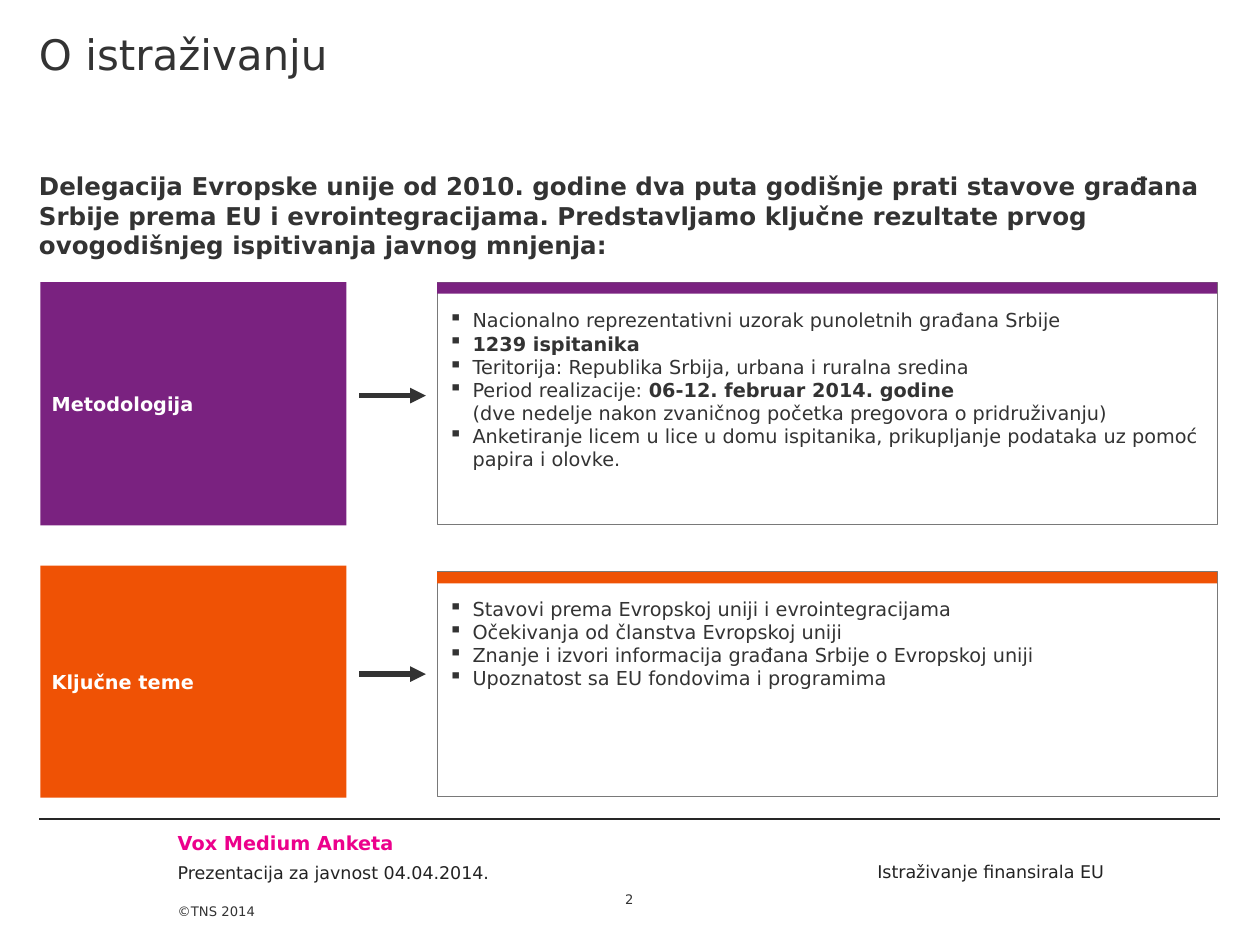
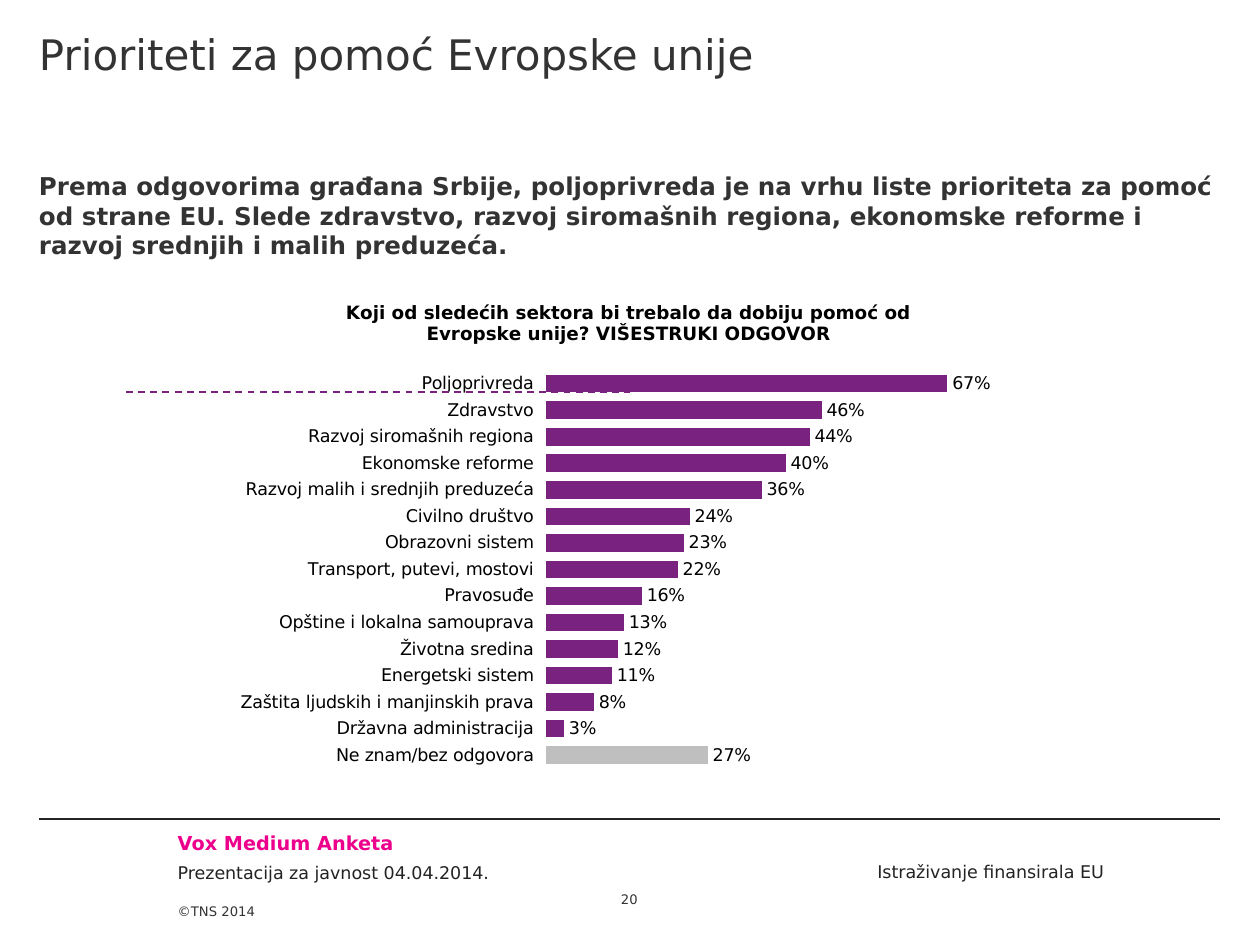
"""Build two survey slides: the study outline and the aid priorities chart."""
from lxml.etree import SubElement as Sub
from pptx import Presentation
from pptx.chart.data import CategoryChartData as Data
from pptx.dml.color import RGBColor as RGB
from pptx.enum.chart import XL_CHART_TYPE as Kind, XL_LABEL_POSITION as Spot
from pptx.enum.chart import XL_TICK_LABEL_POSITION as Tick, XL_TICK_MARK as Mark
from pptx.enum.dml import MSO_LINE as Dash
from pptx.enum.shapes import MSO_CONNECTOR as Link, MSO_SHAPE as Form
from pptx.enum.text import MSO_ANCHOR as Anchor, PP_ALIGN as Align
from pptx.oxml.ns import qn
from pptx.util import Inches, Pt

FACE = "DejaVu Sans"
DARK, NOTE, RULE = RGB(0x33, 0x33, 0x33), RGB(0x23, 0x23, 0x23), RGB(0x26, 0x26, 0x26)
PINK, PURPLE, ORANGE = RGB(0xEC, 0, 0x8C), RGB(0x7A, 0x22, 0x80), RGB(0xEF, 0x52, 0x05)
WHITE, BLACK = RGB(0xFF, 0xFF, 0xFF), RGB(0, 0, 0)
EDGE, GREY = RGB(0x79, 0x79, 0x79), RGB(0xBF, 0xBF, 0xBF)

LEFT, WIDE = 0.31, 9.37
PAD = (0.09, 0.04, 0.09, 0.04)
PERCENT = r"0\%"

FOOT = [
    ("Vox Medium Anketa", (1.41, 6.6, 3.31, 0.19), 11, PINK, True, Align.LEFT),
    ("Prezentacija za javnost 04.04.2014.", (1.41, 6.84, 3.31, 0.17), 10, NOTE, False, Align.LEFT),
    ("Istraživanje finansirala EU", (5.36, 6.83, 3.4, 0.17), 10, NOTE, False, Align.RIGHT),
]

STUDY = {
    "title": "O istraživanju",
    "page": 2,
    "lead": "Delegacija Evropske unije od 2010. godine dva puta godišnje prati stavove "
            "građana Srbije prema EU i evrointegracijama. Predstavljamo ključne rezultate "
            "prvog ovogodišnjeg ispitivanja javnog mnjenja:",
}
TOPICS = [
    {"name": "Metodologija", "color": PURPLE, "tag": (2.24, 1.93), "panel": (2.24, 1.92),
     "band": 2.24, "arrow": 3.14, "points": [
         [("Nacionalno reprezentativni uzorak punoletnih građana Srbije", False)],
         [("1239 ispitanika", True)],
         [("Teritorija: Republika Srbija, urbana i ruralna sredina", False)],
         [("Period realizacije: ", False), ("06-12. februar 2014. godine", True), ("\n", False),
          ("(dve nedelje nakon zvaničnog početka pregovora o pridruživanju)", False)],
         [("Anketiranje licem u lice u domu ispitanika, prikupljanje podataka "
           "uz pomoć papira i olovke.", False)]]},
    {"name": "Ključne teme", "color": ORANGE, "tag": (4.49, 1.84), "panel": (4.53, 1.79),
     "band": 4.54, "arrow": 5.35, "points": [
         [("Stavovi prema Evropskoj uniji i evrointegracijama", False)],
         [("Očekivanja od članstva Evropskoj uniji", False)],
         [("Znanje i izvori informacija građana Srbije o Evropskoj uniji", False)],
         [("Upoznatost sa EU fondovima i programima", False)]]},
]

AID = {
    "title": "Prioriteti za pomoć Evropske unije",
    "page": 20,
    "lead": "Prema odgovorima građana Srbije, poljoprivreda je na vrhu liste prioriteta za "
            "pomoć od strane EU. Slede zdravstvo, razvoj siromašnih regiona, ekonomske "
            "reforme i razvoj srednjih i malih preduzeća.",
}
ASK = ("Koji od sledećih sektora bi trebalo da dobiju pomoć od Evropske unije? "
       "VIŠESTRUKI ODGOVOR")
SECTORS = [
    ("Poljoprivreda", 67), ("Zdravstvo", 46), ("Razvoj siromašnih regiona", 44),
    ("Ekonomske reforme", 40), ("Razvoj malih i srednjih preduzeća", 36),
    ("Civilno društvo", 24), ("Obrazovni sistem", 23), ("Transport, putevi, mostovi", 22),
    ("Pravosuđe", 16), ("Opštine i lokalna samouprava", 13), ("Životna sredina", 12),
    ("Energetski sistem", 11), ("Zaštita ljudskih i manjinskih prava", 8),
    ("Državna administracija", 3), ("Ne znam/bez odgovora", 27),
]
PLOT = {"x": 0.4, "y": 0.18, "w": 0.58, "h": 0.79}


def style(font, size, color, bold=False):
    font.name, font.size, font.bold = FACE, Pt(size), bold
    font.color.rgb = color


def frame(shape, pad, anchor):
    body = shape.text_frame
    body.word_wrap = True
    body.vertical_anchor = anchor
    (body.margin_left, body.margin_top,
     body.margin_right, body.margin_bottom) = map(Inches, pad)
    return body


def write(shape, text, size, color, bold=False, align=Align.LEFT,
          pad=(0, 0, 0, 0), anchor=Anchor.TOP):
    para = frame(shape, pad, anchor).paragraphs[0]
    para.text, para.alignment = text, align
    style(para.font, size, color, bold)


def label(slide, text, spot, *args, **more):
    write(slide.shapes.add_textbox(*map(Inches, spot)), text, *args, **more)


def block(slide, spot, fill, edge=None):
    shape = slide.shapes.add_shape(Form.RECTANGLE, *map(Inches, spot))
    shape.shadow.inherit = False
    shape.fill.solid()
    shape.fill.fore_color.rgb = fill
    if edge:
        shape.line.color.rgb, shape.line.width = edge, Pt(0.25)
    else:
        shape.line.fill.background()
    return shape


def rule(slide, start, end, y, color, width):
    line = slide.shapes.add_connector(Link.STRAIGHT, *map(Inches, (start, y, end, y)))
    line.line.color.rgb, line.line.width = color, Pt(width)
    Sub(line.element.spPr, qn("a:effectLst"))
    return line


def base(deck, page):
    slide = deck.slides.add_slide(deck.slide_layouts[6])
    label(slide, "©TNS 2014", (1.41, 6.92, 0.83, 0.58), 7.5, DARK,
          pad=(0, 0, 0, 0.29), anchor=Anchor.BOTTOM)
    rule(slide, LEFT, LEFT + WIDE, 6.5, RULE, 0.75)
    for text, spot, size, color, bold, align in FOOT:
        label(slide, text, spot, size, color, bold, align)
    top = (0, 0.23, 0, 0)
    label(slide, page["title"], (LEFT, 0, WIDE, 1.13), 24, DARK, pad=top)
    label(slide, str(page["page"]), (4.72, 6.92, 0.55, 0.28), 7.5, DARK,
          align=Align.CENTER, anchor=Anchor.BOTTOM)
    label(slide, page["lead"], (LEFT, 1.13, WIDE, 0.83), 14, DARK, True, pad=top)
    return slide


def bullets(shape, points):
    body = frame(shape, (0.09, 0.21, 0.09, 0.04), Anchor.TOP)
    for i, parts in enumerate(points):
        para = body.add_paragraph() if i else body.paragraphs[0]
        para.alignment = Align.LEFT
        props = para._p.get_or_add_pPr()
        props.set("marL", str(Inches(0.19)))
        props.set("indent", str(Inches(-0.19)))
        Sub(props, qn("a:buChar"), char="▪")
        style(para.font, 11, DARK)
        for text, bold in parts:
            if text == "\n":
                para.add_line_break()
                continue
            run = para.add_run()
            run.text = text
            if bold:
                run.font.bold = True


def topic(slide, item):
    top, high = item["panel"]
    bullets(block(slide, (3.47, top, 6.19, high), WHITE, EDGE), item["points"])
    block(slide, (3.47, item["band"], 6.19, 0.09), item["color"])
    top, high = item["tag"]
    tag = block(slide, (0.32, top, 2.43, high), item["color"])
    write(tag, item["name"], 11, WHITE, True, pad=PAD, anchor=Anchor.MIDDLE)
    arrow = rule(slide, 2.85, 3.38, item["arrow"], DARK, 3)
    Sub(arrow.line._get_or_add_ln(), qn("a:tailEnd"), type="triangle")


def place(chart):
    area = chart.element.xpath("c:chart/c:plotArea")[0]
    for old in area.findall(qn("c:layout")):
        area.remove(old)
    outer = Sub(area, qn("c:layout"))
    area.insert(0, outer)
    inner = Sub(outer, qn("c:manualLayout"))
    Sub(inner, qn("c:layoutTarget"), val="inner")
    for key in "xy":
        Sub(inner, qn(f"c:{key}Mode"), val="edge")
    for key, size in PLOT.items():
        Sub(inner, qn(f"c:{key}"), val=str(size))


def bars(slide):
    data = Data(number_format=PERCENT)
    data.categories = [name for name, _ in SECTORS]
    data.add_series("Series 1", [score for _, score in SECTORS])
    spot = map(Inches, (1.71, 2.22, 6.56, 4))
    chart = slide.shapes.add_chart(Kind.BAR_CLUSTERED, *spot, data).chart
    style(chart.font, 10, BLACK)
    chart.has_legend = False
    chart.has_title = True
    head = chart.chart_title
    head.include_in_layout = False
    para = head.text_frame.paragraphs[0]
    para.text = ASK
    style(para.font, 10.5, BLACK, True)
    cats, vals = chart.category_axis, chart.value_axis
    cats.reverse_order = True
    cats.major_tick_mark = cats.minor_tick_mark = Mark.NONE
    cats.tick_label_position = Tick.LOW
    cats.format.line.fill.background()
    vals.minimum_scale, vals.maximum_scale = 0, 80
    vals.has_major_gridlines = False
    vals.visible = False
    plot = chart.plots[0]
    plot.gap_width, plot.overlap, plot.vary_by_categories = 50, -25, False
    plot.has_data_labels = True
    tags = plot.data_labels
    tags.show_value, tags.position = True, Spot.OUTSIDE_END
    tags.number_format, tags.number_format_is_linked = PERCENT, False
    style(tags.font, 10, BLACK)
    series = plot.series[0]
    last = series.points[len(SECTORS) - 1]
    for part, color in ((series, PURPLE), (last, GREY)):
        part.format.fill.solid()
        part.format.fill.fore_color.rgb = color
    place(chart)


def main():
    deck = Presentation()
    deck.slide_width, deck.slide_height = Inches(10), Inches(7.5)
    slide = base(deck, STUDY)
    for item in TOPICS:
        topic(slide, item)
    slide = base(deck, AID)
    bars(slide)
    rule(slide, 1, 5, 3.11, PURPLE, 1).line.dash_style = Dash.DASH
    deck.save("out.pptx")


if __name__ == "__main__":
    main()
